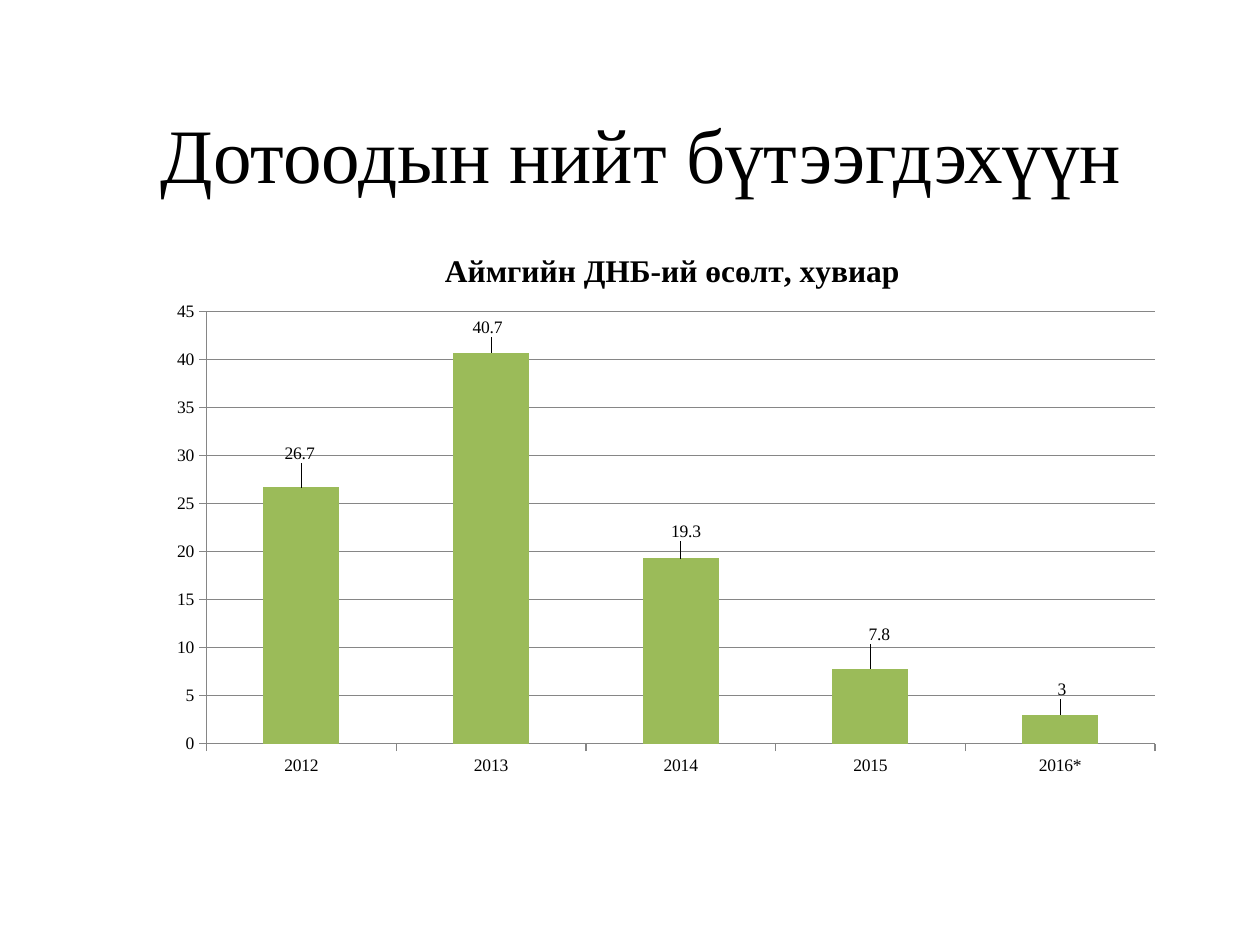
from lxml import etree
from pptx import Presentation
from pptx.chart.data import CategoryChartData
from pptx.dml.color import RGBColor
from pptx.enum.chart import XL_CHART_TYPE, XL_LABEL_POSITION, XL_TICK_MARK
from pptx.enum.text import MSO_ANCHOR, PP_ALIGN
from pptx.oxml.ns import qn
from pptx.util import Pt

COLUMN = XL_CHART_TYPE.COLUMN_CLUSTERED
OUTSIDE_END = XL_LABEL_POSITION.OUTSIDE_END
TICK_OUT = XL_TICK_MARK.OUTSIDE
MIDDLE = MSO_ANCHOR.MIDDLE
CENTER = PP_ALIGN.CENTER

BLACK = RGBColor(0x00, 0x00, 0x00)
GREEN = RGBColor(0x9B, 0xBB, 0x59)
GRAY = RGBColor(0x86, 0x86, 0x86)
FONT = "Times New Roman"

CHART_W, CHART_H = 582, 324
YEARS = ["2012", "2013", "2014", "2015", "2016*"]
GROWTH = [26.7, 40.7, 19.3, 7.8, 3]
LABEL_SHIFTS = [(-1, -11), (-2, -6), (3, -7), (5, -11), (1, -6)]


def style_font(font, size, bold=False):
    font.name = FONT
    font.size = Pt(size)
    font.bold = bold
    font.color.rgb = BLACK


def make_layout(x, y, w=None, h=None, edge=False, inner=False):
    layout = etree.Element(qn("c:layout"))
    manual = etree.SubElement(layout, qn("c:manualLayout"))
    items = []
    if inner:
        items.append(("layoutTarget", "inner"))
    if edge:
        items += [("xMode", "edge"), ("yMode", "edge")]
    items += [("x", x / CHART_W), ("y", y / CHART_H)]
    if w:
        items += [("w", w / CHART_W), ("h", h / CHART_H)]
    for tag, value in items:
        etree.SubElement(manual, qn(f"c:{tag}")).set("val", str(value))
    return layout


def set_layout(parent, layout, index):
    for old in parent.findall(qn("c:layout")):
        parent.remove(old)
    parent.insert(index, layout)


def add_title(s, text):
    tf = s.shapes.add_textbox(Pt(48), Pt(42), Pt(648), Pt(90)).text_frame
    tf.word_wrap = True
    tf.vertical_anchor = MIDDLE
    p = tf.paragraphs[0]
    p.alignment = CENTER
    r = p.add_run()
    r.text = text
    style_font(r.font, 44)


def style_axis(axis):
    axis.major_tick_mark = TICK_OUT
    axis.format.line.color.rgb = GRAY
    axis.format.line.width = Pt(0.75)


def add_chart_title(chart, text):
    title = chart.chart_title
    r = title.text_frame.paragraphs[0].add_run()
    r.text = text
    style_font(r.font, 18, True)
    title_xml = chart._chartSpace.find(".//" + qn("c:title"))
    set_layout(title_xml, make_layout(161, 14, edge=True), 1)


def add_labels(chart, plot):
    plot.has_data_labels = True
    plot.data_labels.show_value = True
    plot.data_labels.position = OUTSIDE_END
    for i in range(len(YEARS)):
        plot.series[0].points[i].data_label.position = OUTSIDE_END
    labels = chart._chartSpace.iter(qn("c:dLbl"))
    for label, shift in zip(labels, LABEL_SHIFTS):
        set_layout(label, make_layout(*shift), 1)


def add_growth_chart(s):
    data = CategoryChartData()
    data.categories = YEARS
    data.add_series("Series 1", GROWTH)
    chart = s.shapes.add_chart(
        COLUMN, Pt(90), Pt(126), Pt(CHART_W), Pt(CHART_H), data
    ).chart
    style_font(chart.font, 10)
    chart.has_legend = False
    add_chart_title(chart, "Аймгийн ДНБ-ий өсөлт, хувиар")

    plot = chart.plots[0]
    plot.gap_width = 150
    plot.vary_by_categories = False
    fill = plot.series[0].format.fill
    fill.solid()
    fill.fore_color.rgb = GREEN
    add_labels(chart, plot)

    style_axis(chart.category_axis)
    axis = chart.value_axis
    style_axis(axis)
    axis.minimum_scale = 0
    axis.maximum_scale = 45
    axis.major_unit = 5
    axis.has_major_gridlines = True
    axis.major_gridlines.format.line.color.rgb = GRAY
    axis.major_gridlines.format.line.width = Pt(0.75)
    plot_area = chart._chartSpace.find(".//" + qn("c:plotArea"))
    set_layout(plot_area, make_layout(28, 52, 542, 247, True, True), 0)


def main():
    prs = Presentation()
    prs.slide_width = Pt(720)
    prs.slide_height = Pt(540)
    s = prs.slides.add_slide(prs.slide_layouts[6])
    add_title(s, "Дотоодын нийт бүтээгдэхүүн ")
    add_growth_chart(s)
    prs.save("out.pptx")


if __name__ == "__main__":
    main()
